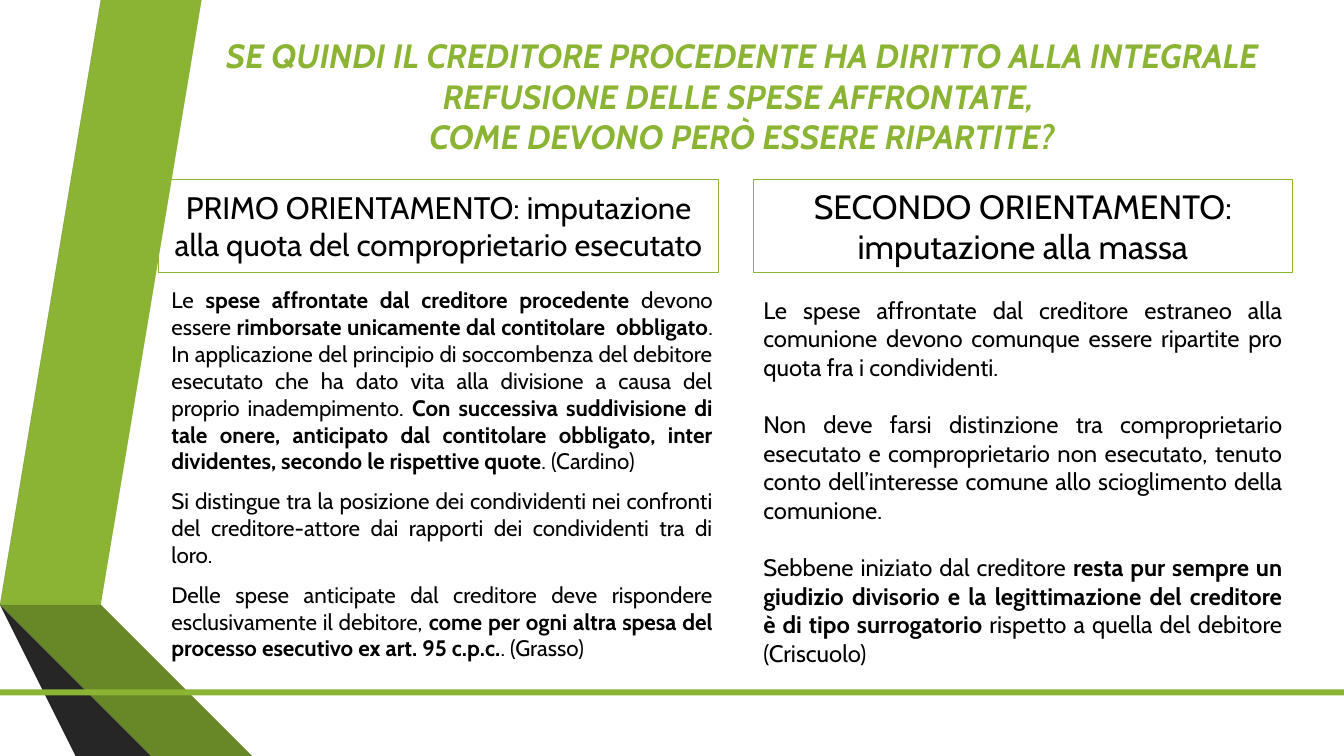
from pptx import Presentation
from pptx.dml.color import RGBColor
from pptx.enum.shapes import MSO_SHAPE
from pptx.enum.text import MSO_ANCHOR, MSO_AUTO_SIZE, PP_ALIGN
from pptx.oxml import parse_xml
from pptx.oxml.ns import nsdecls
from pptx.util import Inches, Pt

RECT = MSO_SHAPE.RECTANGLE
TOP, MID = MSO_ANCHOR.TOP, MSO_ANCHOR.MIDDLE
LEFT, CENTER, FULL = PP_ALIGN.LEFT, PP_ALIGN.CENTER, PP_ALIGN.JUSTIFY
FIXED = MSO_AUTO_SIZE.NONE
WIDE, HIGH = 13.33, 7.5
GREEN, BLACK = "8BB434", "000000"

# Content: each paragraph is a list of runs, every second run is bold
TITLE = [
    ["SE QUINDI IL CREDITORE PROCEDENTE HA DIRITTO ALLA INTEGRALE "
     "REFUSIONE DELLE SPESE AFFRONTATE, "],
    ["COME DEVONO PERÒ ESSERE RIPARTITE?"],
]
HEADS = [
    [["PRIMO ORIENTAMENTO: imputazione alla quota del comproprietario esecutato"]],
    [["SECONDO ORIENTAMENTO: imputazione alla massa"]],
]
FIRST = [
    ["Le ", "spese affrontate dal creditore procedente ", "devono essere ",
     "rimborsate unicamente dal contitolare  obbligato",
     ". In applicazione del principio di soccombenza del debitore esecutato "
     "che ha dato vita alla divisione a causa del proprio inadempimento. ",
     "Con successiva suddivisione di tale onere, anticipato dal contitolare "
     "obbligato, inter dividentes, secondo le rispettive quote",
     ". (Cardino)"],
    ["Si distingue tra la posizione dei condividenti nei confronti del "
     "creditore-attore dai rapporti dei condividenti tra di loro."],
    ["Delle spese anticipate dal creditore deve rispondere esclusivamente il debitore, ",
     "come per ogni altra spesa del processo esecutivo ex art. 95 c.p.c.",
     ". (Grasso)"],
]
SECOND = [
    ["Le spese affrontate dal creditore estraneo alla comunione devono "
     "comunque essere ripartite pro quota fra i condividenti."],
    ["Non deve farsi distinzione tra comproprietario esecutato e "
     "comproprietario non esecutato, tenuto conto dell’interesse comune "
     "allo scioglimento della comunione."],
    ["Sebbene iniziato dal creditore ",
     "resta pur sempre un giudizio divisorio e la legittimazione del "
     "creditore è di tipo surrogatorio ",
     "rispetto a quella del debitore (Criscuolo)"],
]

# Folded ribbons: fill and corner points
BANDS = [
    (GREEN, [(0.5, 5.78), (0.77, 5.83), (1.73, 0), (1.45, 0)]),
    ("595959", [(1.39, 0), (1.11, 0), (0.16, 5.73), (0.44, 5.77)]),
    ("262626", [(0.16, 5.73), (1.45, HIGH), (1.51, HIGH)]),
    ("465A1A", [(0.5, 5.79), (2.08, HIGH), (2.14, HIGH)]),
    ("688727", [(0.5, 5.79), (2.14, HIGH), (2.83, HIGH), (0.77, 5.83), (0.5, 5.78)]),
    ("404040", [(2.02, HIGH), (0.48, 5.83), (0.44, 5.77), (0.16, 5.73), (1.51, HIGH)]),
]

# Columns and rows
COLS = [(1.57, 5.56), (7.47, 5.35)]
HEAD_TOP, HEAD_HIGH = 1.78, 0.92


def color(code):
    return RGBColor.from_string(code)


def paint(shape, code):
    shape.shadow.inherit = False
    shape.fill.solid()
    shape.fill.fore_color.rgb = color(code)
    shape.line.fill.background()


def write(shape, box, paras, size, ink=BLACK, align=FULL, anchor=TOP,
          bold=False, slant=False, before=0, after=0):
    shape.left, shape.top, shape.width, shape.height = map(Inches, box)
    frame = shape.text_frame
    frame.word_wrap, frame.auto_size = True, FIXED
    frame.vertical_anchor = anchor
    frame.margin_left = frame.margin_right = Inches(0.1)
    frame.margin_top = frame.margin_bottom = Inches(0.05)
    for i, runs in enumerate(paras):
        para = frame.add_paragraph() if i else frame.paragraphs[0]
        para.alignment, para.line_spacing = align, 1.0
        para.space_before = Pt(before if i else 0)
        para.space_after = Pt(after)
        props = para._p.get_or_add_pPr()
        props.set("marL", "0")
        props.set("indent", "0")
        props.append(parse_xml(f"<a:buNone {nsdecls('a')}/>"))
        for j, text in enumerate(runs):
            run = para.add_run()
            run.text = text
            font = run.font
            font.name, font.size = "Cabin", Pt(size)
            font.bold, font.italic = bold or j % 2 == 1, slant
            font.color.rgb = color(ink)


deck = Presentation()
deck.slide_width, deck.slide_height = Inches(WIDE), Inches(HIGH)
slide = deck.slides.add_slide(deck.slide_layouts[4])
shapes = slide.shapes
title, head1, body1, head2, body2 = holders = list(slide.placeholders)

# Ribbons and base line
for code, points in BANDS:
    form = shapes.build_freeform(*points[0], scale=Inches(1))
    form.add_line_segments(points[1:], close=True)
    paint(form.convert_to_shape(), code)
paint(shapes.add_shape(RECT, 0, Inches(6.84), Inches(WIDE), Inches(0.06)), GREEN)

# Text stands in front of the ribbons
for holder in holders:
    holder.element.getparent().append(holder.element)

write(title, (2.03, 0.3, 10.66, 1.31), TITLE, 24, ink=GREEN,
      align=CENTER, bold=True, slant=True)

# Framed headings
for head, (left, wide), paras, size in zip((head1, head2), COLS, HEADS, (22.2, 24)):
    write(head, (left, HEAD_TOP, wide, HEAD_HIGH), paras, size,
          align=CENTER, anchor=MID)
    head.line.color.rgb = color(GREEN)
    head.line.width = Pt(0.75)

# Body columns
write(body1, (1.6, 2.79, 5.57, 4.07), FIRST, 16, before=3.2, after=6)
write(body2, (COLS[1][0], 2.88, COLS[1][1], 3.82), SECOND, 17, before=20.5)

deck.save("out.pptx")
